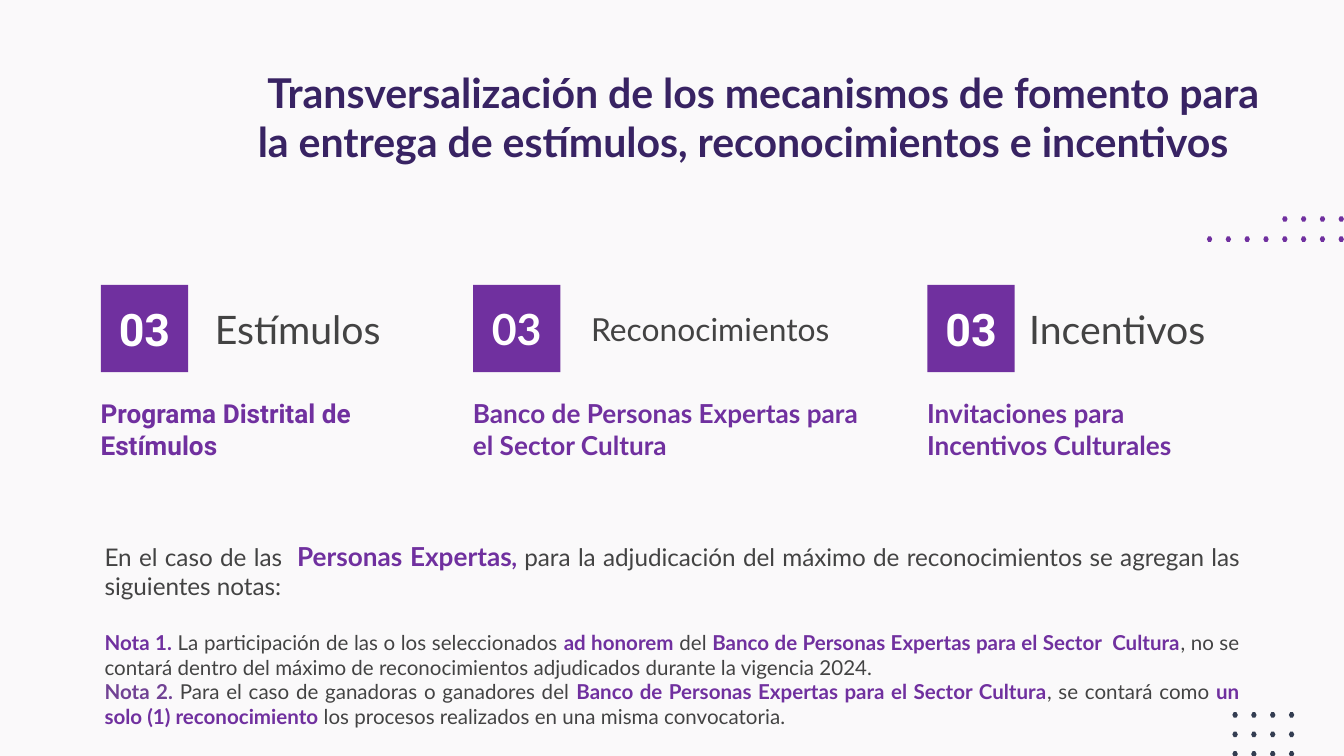
import pptx
import pptx.util
import pptx.dml.color
import pptx.enum.text
import pptx.enum.shapes

ALIGN = pptx.enum.text.PP_ALIGN
ANCHOR = pptx.enum.text.MSO_ANCHOR
COLS, ROWS = 100, 56.25  # square cells, a tenth of an inch each
CELL = pptx.util.Inches(0.1)


class Theme:
    back, plum, mauve = "FAF9FA", "70309F", "714294"
    navy, slate, gray, white = "382363", "333D51", "434343", "FFFFFF"
    lato, robot = "Lato", "Roboto"
    title, sub, lead, note = 22, 14, 13, 11


def rgb(code):
    return pptx.dml.color.RGBColor.from_string(code)


def cells(*nums):
    return [round(num * CELL) for num in nums]


def look(size, color=Theme.gray, name=Theme.lato, **more):
    return {"size": pptx.util.Pt(size), "name": name, "color": color, **more}


def write(para, text, form):
    run = para.add_run()
    run.text = text
    for key, val in form.items():
        if key == "color":
            run.font.color.rgb = rgb(val)
        else:
            setattr(run.font, key, val)


def frame(shape, anchor=ANCHOR.TOP):
    body = shape.text_frame
    form = {"word_wrap": True, "vertical_anchor": anchor}
    form.update({"margin_" + side: CELL for side in ("left", "top", "right", "bottom")})
    for key, val in form.items():
        setattr(body, key, val)
    return body


def label(slide, box, text, form, anchor=ANCHOR.TOP):
    body = frame(slide.shapes.add_textbox(*cells(*box)), anchor)
    write(body.paragraphs[0], text, form)
    return body.paragraphs[0]


def title(slide, box):
    text = ("Transversalización de los mecanismos de fomento para "
            "la entrega de estímulos, reconocimientos e incentivos")
    para = label(slide, box, text, look(Theme.title, Theme.navy, bold=True))
    # The first line starts a little further in
    props = para._p.get_or_add_pPr()
    props.set("marL", str(round(0.2 * CELL)))
    props.set("indent", str(round(0.7 * CELL)))


def card(slide, box, head, text, shift, wide, sizes, fonts):
    left, top, width, height = box
    side = 6.5
    # Number tile
    tile = slide.shapes.add_shape(
        pptx.enum.shapes.MSO_SHAPE.RECTANGLE, *cells(left, top, side, side))
    tile.shadow.inherit = False
    tile.fill.solid()
    tile.fill.fore_color.rgb = rgb(Theme.plum)
    tile.line.fill.background()
    para = frame(tile, ANCHOR.MIDDLE).paragraphs[0]
    para.alignment = ALIGN.CENTER
    write(para, "03", look(sizes[0], Theme.white, fonts[0], bold=True))
    # Heading beside it and programme below
    label(slide, (left + shift, top, wide, side), head, look(sizes[1]), ANCHOR.MIDDLE)
    label(slide, (left - 1, top + 7.4, width, height - 7.4), text,
          look(Theme.sub, Theme.plum, fonts[1], bold=True))


def notes(slide, box):
    lead = look(Theme.lead)
    big = look(Theme.sub, Theme.plum, bold=True)
    mark = look(Theme.lead, Theme.plum, bold=True, italic=True)
    plain = look(Theme.note)
    bold = look(Theme.note, Theme.plum, bold=True)
    mauve = look(Theme.note, Theme.mauve, bold=True)
    paras = [
        [("En el caso de las ", lead), (" Personas Expertas", big), (", ", mark),
         ("para la adjudicación del máximo de reconocimientos se agregan las "
          "siguientes notas:", lead)],
        [("Nota 1.", bold), (" La participación de las o los seleccionados ", plain),
         ("ad honorem", bold), (" del ", plain),
         ("Banco de Personas Expertas para el Sector  Cultura", bold),
         (", no se contará dentro del máximo de reconocimientos adjudicados "
          "durante la vigencia 2024.", plain)],
        [("Nota 2.", mauve), (" Para el caso de ganadoras o ganadores del ", plain),
         ("Banco de Personas Expertas para el Sector Cultura", bold),
         (", se contará como ", plain), ("un solo (1) reconocimiento ", bold),
         ("los procesos realizados en una misma convocatoria.", plain)],
    ]
    body = frame(slide.shapes.add_textbox(*cells(*box)))
    for num, runs in enumerate(paras):
        para = body.add_paragraph() if num else body.paragraphs[0]
        para.alignment = ALIGN.JUSTIFY
        if num == 1:
            para.space_before = pptx.util.Pt(15.6)
        for text, form in runs:
            write(para, text, form)


def dots(slide, box, rows, color):
    """Right-aligned rows of six-sided dots; rows holds the count of each."""
    left, top, width, height = box
    size = 0.4
    most = max(rows)
    across = (width - size) / (most - 1)
    down = (height - size) / (len(rows) - 1)
    hexa = [(0.3, 0), (0.1, 0), (0, 0.2), (0.1, 0.4), (0.3, 0.4), (0.4, 0.2)]
    group = slide.shapes.add_group_shape()
    for row, count in enumerate(rows):
        for col in range(most - count, most):
            x, y = left + col * across, top + row * down
            ends = [cells(x + dx, y + dy) for dx, dy in hexa]
            pen = group.shapes.build_freeform(*ends[0])
            pen.add_line_segments(ends[1:], close=True)
            dot = pen.convert_to_shape()
            dot.shadow.inherit = False
            dot.fill.solid()
            dot.fill.fore_color.rgb = rgb(color)
            dot.line.fill.background()


def main():
    deck = pptx.Presentation()
    deck.slide_width, deck.slide_height = cells(COLS, ROWS)
    slide = deck.slides.add_slide(deck.slide_layouts[6])
    slide.background.fill.solid()
    slide.background.fill.fore_color.rgb = rgb(Theme.back)

    title(slide, (18, 4, 77.5, 13.1))

    # Three mechanisms: left, width, heading, programme, heading shift and width
    lato, robot = Theme.lato, Theme.robot
    items = [
        (7.5, 27.8, "Estímulos", "Programa Distrital de Estímulos",
         7.5, 22, (24, 21), (robot, robot)),
        (35.2, 30.9, "Reconocimientos",
         "Banco de Personas Expertas para el Sector Cultura",
         7.8, 25, (23, 17), (lato, lato)),
        (69, 24.1, "Incentivos", "Invitaciones para Incentivos Culturales",
         6.6, 22, (24, 21), (robot, lato)),
    ]
    for left, width, *rest in items:
        card(slide, (left, 21.2, width, 15.1), *rest)

    notes(slide, (6.8, 39.2, 86.4, 15.8))

    # Dotted corners
    dots(slide, (89.8, 16.1, 10.2, 1.9), (4, 8), Theme.plum)
    dots(slide, (91.7, 53, 4.6, 3.3), (4, 4, 4), Theme.slate)

    deck.save("out.pptx")


if __name__ == "__main__":
    main()
